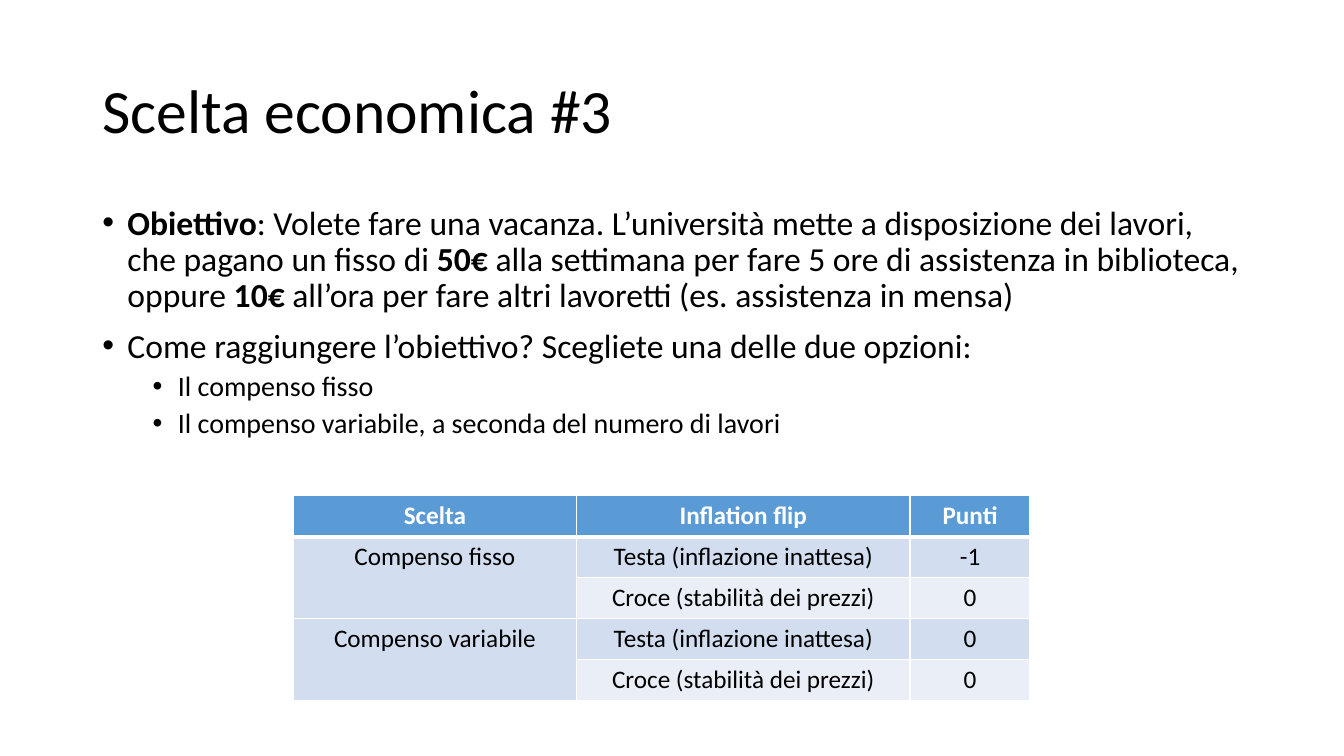
from lxml import etree
from pptx import Presentation
from pptx import util as u
from pptx.dml import color
from pptx.enum import text
from pptx.oxml import ns

FONT = "Calibri"
BLACK, WHITE = "000000", "FFFFFF"
HEADER, BAND_DARK, BAND_LIGHT = "5B9BD5", "D2DEEF", "EAEFF7"

TITLE = "Scelta economica #3"
# Each bullet: indent level, then (text, bold) runs.
BULLETS = [
    (0, [("Obiettivo", True),
         (": Volete fare una vacanza. L’università mette a disposizione dei lavori, "
          "che pagano un fisso di ", False),
         ("50€", True),
         (" alla settimana per fare 5 ore di assistenza in biblioteca, oppure ", False),
         ("10€", True),
         (" all’ora per fare altri lavoretti (es. assistenza in mensa)", False)]),
    (0, [("Come raggiungere l’obiettivo? Scegliete una delle due opzioni:", False)]),
    (1, [("Il compenso fisso", False)]),
    (1, [("Il compenso variabile, a seconda del numero di lavori", False)]),
]
# Font size, space before and left margin for each level.
LEVELS = [(24, 10, 18), (20, 5, 54)]
HANGING = 18

HEADINGS = ["Scelta", "Inflation flip", "Punti"]
OUTCOMES = ["Testa (inflazione inattesa)", "Croce (stabilità dei prezzi)"]
CHOICES = [("Compenso fisso", ["-1", "0"]), ("Compenso variabile", ["0", "0"])]
COLUMN_WIDTHS = [202.3, 238.3, 85.7]
ROW_HEIGHT = 29.2


def rgb(value):
    return color.RGBColor.from_string(value)


def set_format(target, values):
    for name, value in values.items():
        setattr(target, name, value)


def add_run(paragraph, content, size, colour=BLACK, bold=False):
    run = paragraph.add_run()
    run.text = content
    set_format(run.font, {"name": FONT, "size": u.Pt(size), "bold": bold})
    run.font.color.rgb = rgb(colour)


def add_text_box(slide, left, top, width, height, anchor):
    box = slide.shapes.add_textbox(*map(u.Pt, (left, top, width, height)))
    set_format(box.text_frame, {"word_wrap": True, "vertical_anchor": anchor})
    return box.text_frame


def add_title(slide):
    frame = add_text_box(slide, 66, 28.8, 828, 104.4, text.MSO_ANCHOR.MIDDLE)
    paragraph = frame.paragraphs[0]
    paragraph.line_spacing = 0.9
    add_run(paragraph, TITLE, 44)


def set_bullet(paragraph, level, margin):
    properties = paragraph._p.get_or_add_pPr()
    set_format(paragraph, {"level": level})
    properties.set("marL", str(u.Pt(margin)))
    properties.set("indent", str(-u.Pt(HANGING)))
    etree.SubElement(properties, ns.qn("a:buFont"), typeface="Arial")
    etree.SubElement(properties, ns.qn("a:buChar"), char="•")


def add_bullets(slide):
    frame = add_text_box(slide, 66, 143.75, 828, 342.6, text.MSO_ANCHOR.TOP)
    for index, (level, runs) in enumerate(BULLETS):
        paragraph = frame.add_paragraph() if index else frame.paragraphs[0]
        size, space_before, margin = LEVELS[level]
        set_format(paragraph, {"line_spacing": 0.9, "space_before": u.Pt(space_before)})
        set_bullet(paragraph, level, margin)
        for content, bold in runs:
            add_run(paragraph, content, size, bold=bold)


def set_borders(cell, widths):
    """Draw white borders; widths maps the sides L, R, T and B, in that order, to points."""
    properties = cell._tc.get_or_add_tcPr()
    for position, (side, width) in enumerate(widths.items()):
        line = etree.Element(ns.qn(f"a:ln{side}"), w=str(u.Pt(width)))
        fill = etree.SubElement(line, ns.qn("a:solidFill"))
        etree.SubElement(fill, ns.qn("a:srgbClr"), val=WHITE)
        properties.insert(position, line)


def format_cell(cell, content, row):
    is_header = row == 0
    fill = HEADER if is_header else BAND_DARK if row % 2 else BAND_LIGHT
    cell.fill.solid()
    cell.fill.fore_color.rgb = rgb(fill)
    set_borders(cell, {"L": 1, "R": 1, "T": 3 if row == 1 else 1, "B": 3 if is_header else 1})
    paragraph = cell.text_frame.paragraphs[0]
    paragraph.alignment = text.PP_ALIGN.CENTER
    if content:
        add_run(paragraph, content, 18, WHITE if is_header else BLACK, is_header)


def add_points_table(slide):
    rows = [HEADINGS]
    for choice, points in CHOICES:
        rows += zip([choice, ""], OUTCOMES, points)
    frame = slide.shapes.add_table(
        len(rows), len(HEADINGS), u.Pt(209.5), u.Pt(354.2),
        u.Pt(sum(COLUMN_WIDTHS)), u.Pt(ROW_HEIGHT * len(rows)))
    table = frame.table
    for column, width in zip(table.columns, COLUMN_WIDTHS):
        column.width = u.Pt(width)
    for row, contents in enumerate(rows):
        table.rows[row].height = u.Pt(ROW_HEIGHT)
        for column, content in enumerate(contents):
            format_cell(table.cell(row, column), content, row)
    for first in range(1, len(rows), len(OUTCOMES)):
        table.cell(first, 0).merge(table.cell(first + len(OUTCOMES) - 1, 0))


def main():
    presentation = Presentation()
    set_format(presentation, {"slide_width": u.Pt(960), "slide_height": u.Pt(540)})
    slide = presentation.slides.add_slide(presentation.slide_layouts[6])
    add_title(slide)
    add_bullets(slide)
    add_points_table(slide)
    presentation.save("out.pptx")


if __name__ == "__main__":
    main()
